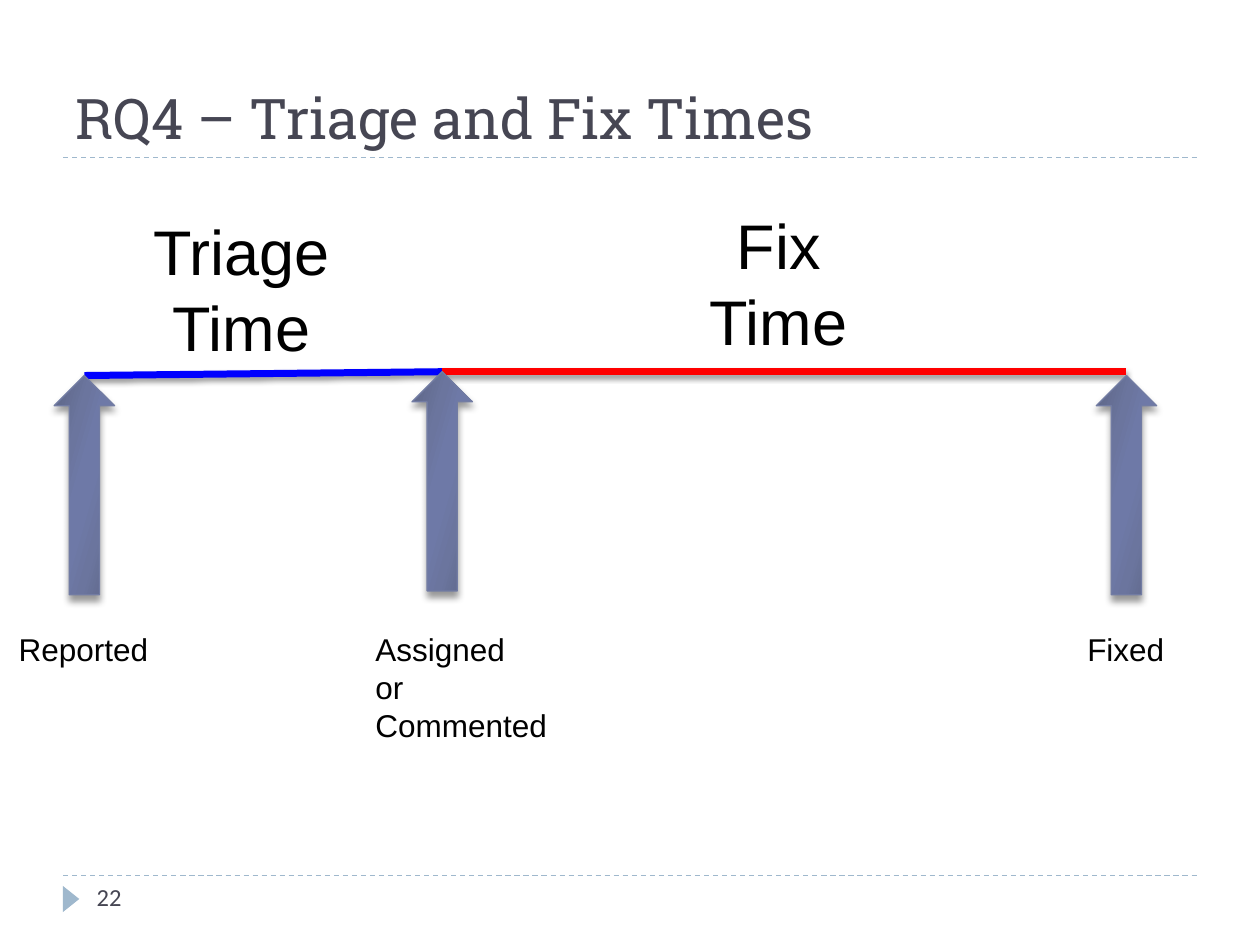
from dataclasses import dataclass

from lxml import etree
from pptx import Presentation
from pptx import util as u
from pptx.dml import color
from pptx.enum import dml, shapes, text
from pptx.oxml import ns

COLORS = {
    "title": "464653",
    "rule": "9FB8CD",
    "triage": "0000FF",
    "fix": "FF0000",
    "outline": "727CA3",
    "text": "000000",
}
ARROW_STOPS = [(0, "5D6585"), (30, "6B759E"), (45, "6E79A7"),
               (55, "6E79A7"), (73, "6B759E"), (100, "5D6585")]
ARROW_WIDTH, ARROW_HEIGHT = 34.5, 125.3
MARGIN, CONTENT_WIDTH = 36, 648


@dataclass
class Milestone:
    x: float
    y: float


@dataclass
class Segment:
    start: float
    start_y: float
    end: float
    end_y: float
    color: str


@dataclass
class Label:
    content: str
    left: float
    top: float
    width: float
    height: float
    size: float = 18
    font: str = "Arial"
    color: str = "text"
    centered: bool = False
    wrap: bool = False


MILESTONES = [Milestone(48.2, 214.6), Milestone(252.7, 212.4), Milestone(643.7, 214.6)]
REPORTED, ASSIGNED, FIXED = MILESTONES
SEGMENTS = [
    Segment(REPORTED.x, REPORTED.y, ASSIGNED.x, ASSIGNED.y, "triage"),
    Segment(ASSIGNED.x, ASSIGNED.y, FIXED.x, ASSIGNED.y, "fix"),
]
LABELS = [
    Label("22", 48.2, 500.4, 156, 29, 14, "Calibri", "title", wrap=True),
    Label("Reported", 3.6, 356.4, 89, 29),
    Label("Assigned\nor\nCommented", 207.4, 356.4, 114.5, 72.7),
    Label("Fixed", 614.2, 356.4, 59, 29),
    Label("Triage\nTime", 69, 118, 138, 94.5, 36, centered=True, wrap=True),
    Label("Fix\nTime", 376, 114.5, 138, 94.5, 36, centered=True, wrap=True),
]


def rgb(name: str) -> color.RGBColor:
    return color.RGBColor.from_string(COLORS[name])


def add_node(parent, tag: str, **attributes):
    return etree.SubElement(parent, ns.qn(tag), {key: str(value) for key, value in attributes.items()})


def set_shadow(shape, blur: float = 0, distance: float = 0) -> None:
    effects = add_node(shape.element.spPr, "a:effectLst")
    if blur:
        shadow = add_node(effects, "a:outerShdw", blurRad=u.Pt(blur), dist=u.Pt(distance),
                          dir=5400000, rotWithShape=0)
        tone = add_node(shadow, "a:srgbClr", val="000000")
        add_node(tone, "a:alpha", val=40000)


def format_runs(text_frame, size: float, font: str, color_name: str) -> None:
    for paragraph in text_frame.paragraphs:
        for run in paragraph.runs:
            run.font.size = u.Pt(size)
            run.font.name = font
            run.font.color.rgb = rgb(color_name)


def add_line(slide, segment: Segment, width: float):
    line = slide.shapes.add_connector(
        shapes.MSO_CONNECTOR.STRAIGHT, u.Pt(segment.start), u.Pt(segment.start_y),
        u.Pt(segment.end), u.Pt(segment.end_y))
    line.line.color.rgb = rgb(segment.color)
    line.line.width = u.Pt(width)
    return line


def add_rule(slide, y: float) -> None:
    rule = add_line(slide, Segment(MARGIN, y, MARGIN + CONTENT_WIDTH, y, "rule"), 0.75)
    rule.line.dash_style = dml.MSO_LINE.DASH
    set_shadow(rule)


def add_page_marker(slide) -> None:
    marker = slide.shapes.add_shape(
        shapes.MSO_SHAPE.ISOSCELES_TRIANGLE, u.Pt(33.1), u.Pt(509), u.Pt(15), u.Pt(9.4))
    marker.rotation = 90
    marker.fill.solid()
    marker.fill.fore_color.rgb = rgb("rule")
    marker.line.fill.background()
    marker.shadow.inherit = False


def add_arrow(slide, milestone: Milestone) -> None:
    arrow = slide.shapes.add_shape(
        shapes.MSO_SHAPE.UP_ARROW, u.Pt(milestone.x - ARROW_WIDTH / 2), u.Pt(milestone.y),
        u.Pt(ARROW_WIDTH), u.Pt(ARROW_HEIGHT))
    arrow.fill.gradient()
    gradient = arrow.element.spPr.find(ns.qn("a:gradFill"))
    for child in list(gradient):
        gradient.remove(child)
    stops = add_node(gradient, "a:gsLst")
    for position, value in ARROW_STOPS:
        stop = add_node(stops, "a:gs", pos=position * 1000)
        add_node(stop, "a:srgbClr", val=value)
    add_node(gradient, "a:lin", ang=16 * 60000, scaled=0)
    arrow.line.color.rgb = rgb("outline")
    arrow.line.width = u.Pt(0.75)
    set_shadow(arrow, 4, 3.4)


def add_label(slide, label: Label) -> None:
    box = slide.shapes.add_textbox(
        u.Pt(label.left), u.Pt(label.top), u.Pt(label.width), u.Pt(label.height))
    frame = box.text_frame
    frame.word_wrap = label.wrap
    frame.auto_size = text.MSO_AUTO_SIZE.SHAPE_TO_FIT_TEXT
    frame.text = label.content
    format_runs(frame, label.size, label.font, label.color)
    if label.centered:
        for paragraph in frame.paragraphs:
            paragraph.alignment = text.PP_ALIGN.CENTER


def set_title(slide) -> None:
    title = slide.shapes.title
    title.left, title.top = u.Pt(MARGIN), u.Pt(12.2)
    title.width, title.height = u.Pt(CONTENT_WIDTH), u.Pt(77.8)
    frame = title.text_frame
    frame.text = "RQ4 – Triage and Fix Times"
    frame.vertical_anchor = text.MSO_ANCHOR.BOTTOM
    frame.paragraphs[0].alignment = text.PP_ALIGN.LEFT
    format_runs(frame, 32, "Roboto Slab", "title")


def main() -> None:
    presentation = Presentation()
    presentation.slide_width, presentation.slide_height = u.Pt(720), u.Pt(540)
    slide = presentation.slides.add_slide(presentation.slide_layouts[5])
    set_title(slide)
    for y in (500.4, 90):
        add_rule(slide, y)
    add_page_marker(slide)
    for segment in SEGMENTS:
        set_shadow(add_line(slide, segment, 4), 3, 2)
    for milestone in MILESTONES:
        add_arrow(slide, milestone)
    for label in LABELS:
        add_label(slide, label)
    presentation.save("out.pptx")


if __name__ == "__main__":
    main()
